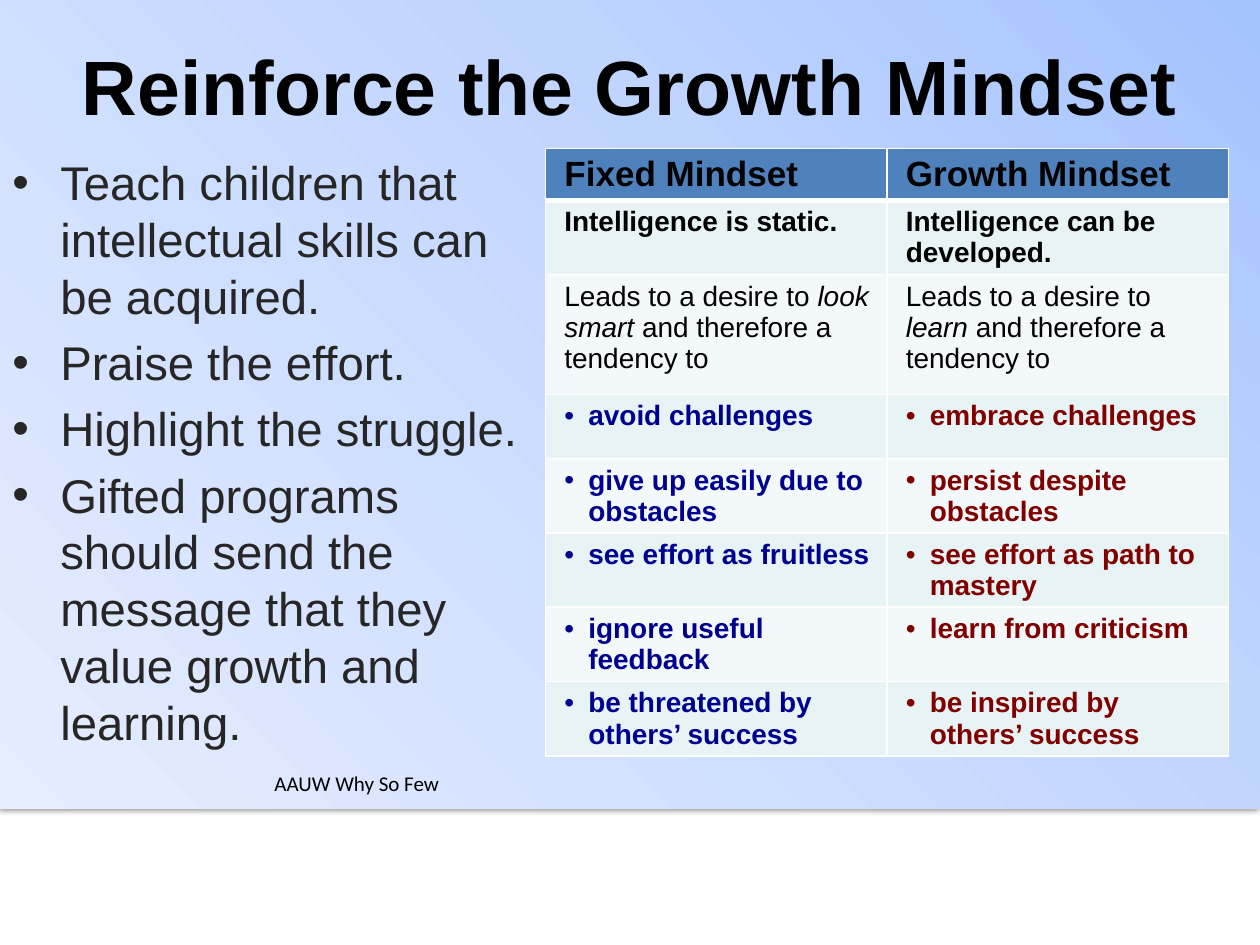
from dataclasses import dataclass

from lxml.etree import SubElement
from pptx import Presentation
from pptx.dml.color import RGBColor as Rgb
from pptx.enum.shapes import MSO_SHAPE as Preset
from pptx.enum.text import MSO_ANCHOR as Anchor, PP_ALIGN as Align
from pptx.oxml import parse_xml
from pptx.oxml.ns import nsdecls, qn
from pptx.util import Inches, Pt


@dataclass(frozen=True)
class Theme:
    font: str = "Arial"
    credit_font: str = "Calibri"
    title_size: float = 44
    body_size: float = 27
    header_size: float = 20
    cell_size: float = 16
    credit_size: float = 12
    ink: str = "000000"
    body_ink: str = "262626"
    mindset_inks: tuple = ("000090", "800000")
    header_fill: str = "4F81BD"
    band_fills: tuple = ("E7F3F4", "F3F9FA")
    border: str = "FFFFFF"
    backdrop_stops: tuple = ((0, "A4C4FF"), (35, "BFD4FF"), (100, "E6EEFF"))


THEME = Theme()

ADVICE = (
    "Teach children that intellectual skills can be acquired.",
    "Praise the effort.",
    "Highlight the struggle.",
    "Gifted programs should send the message that they value growth and learning.",
)
HEADINGS = ("Fixed Mindset", "Growth Mindset")
BELIEFS = ("Intelligence is static.", "Intelligence can be developed.")
# Asterisks enclose italic words.
DESIRES = (
    "Leads to a desire to *look smart *and therefore a tendency to",
    "Leads to a desire to *learn *and therefore a tendency to",
)
TENDENCIES = (
    ("avoid challenges", "embrace challenges"),
    ("give up easily due to obstacles", "persist despite obstacles"),
    ("see effort as fruitless", "see effort as path to mastery"),
    ("ignore useful feedback", "learn from criticism"),
    ("be threatened by others’ success", "be inspired by others’ success"),
)
ROW_HEIGHTS = (0.41, 0.59, 0.95, 0.51, 0.59, 0.59, 0.59, 0.59)


def style(para, size, color, bold=False, font=THEME.font):
    para.font.name = font
    para.font.size = Pt(size)
    para.font.bold = bold
    para.font.color.rgb = Rgb.from_string(color)


def add_bullet(para, indent):
    props = para._p.get_or_add_pPr()
    props.set("marL", str(Inches(indent)))
    props.set("indent", str(-Inches(indent)))
    SubElement(props, qn("a:buFont"), typeface=THEME.font)
    SubElement(props, qn("a:buChar"), char="•")


def add_backdrop(page):
    """Draw the panel with a gradient from its top right corner and a soft shadow."""
    panel = page.shapes.add_shape(Preset.RECTANGLE, 0, 0, Inches(10), Inches(6.42))
    stops = "".join(
        f'<a:gs pos="{place * 1000}"><a:srgbClr val="{color}"/></a:gs>'
        for place, color in THEME.backdrop_stops
    )
    props = panel._element.spPr
    props.append(parse_xml(
        f'<a:gradFill {nsdecls("a")} rotWithShape="1"><a:gsLst>{stops}</a:gsLst>'
        '<a:path path="circle"><a:fillToRect l="100000" b="100000"/></a:path>'
        '</a:gradFill>'
    ))
    panel.line.fill.background()
    props.append(parse_xml(
        f'<a:effectLst {nsdecls("a")}><a:outerShdw blurRad="{Pt(3.1)}" '
        f'dist="{Pt(1.6)}" dir="5400000" rotWithShape="0"><a:srgbClr val="{THEME.ink}">'
        '<a:alpha val="38000"/></a:srgbClr></a:outerShdw></a:effectLst>'
    ))


def add_text_frame(page, left, top, width, height):
    box = page.shapes.add_textbox(
        Inches(left), Inches(top), Inches(width), Inches(height))
    box.text_frame.word_wrap = True
    return box.text_frame


def add_title(page, text):
    frame = add_text_frame(page, 0, 0.25, 10, 1)
    frame.vertical_anchor = Anchor.MIDDLE
    frame.margin_bottom = Inches(0.21)
    para = frame.paragraphs[0]
    para.text = text
    para.alignment = Align.CENTER
    style(para, THEME.title_size, THEME.ink, bold=True)


def add_advice(page):
    frame = add_text_frame(page, 0, 1.17, 4.25, 5.67)
    for index, text in enumerate(ADVICE):
        para = frame.add_paragraph() if index else frame.paragraphs[0]
        para.text = text
        if index:
            para.space_before = Pt(5.4)
        add_bullet(para, 0.38)
        style(para, THEME.body_size, THEME.body_ink)


def add_credit(page, text):
    para = add_text_frame(page, 2.08, 6.07, 1.75, 0.3).paragraphs[0]
    para.text = text
    style(para, THEME.credit_size, THEME.ink, font=THEME.credit_font)


def set_borders(cell, top=1, bottom=1):
    props = cell._tc.get_or_add_tcPr()
    for side, width in (("L", 1), ("R", 1), ("T", top), ("B", bottom)):
        line = SubElement(props, qn(f"a:ln{side}"), w=str(Pt(width)))
        fill = SubElement(line, qn("a:solidFill"))
        SubElement(fill, qn("a:srgbClr"), val=THEME.border)


def fill_cell(cell, text, fill, size=THEME.cell_size, color=THEME.ink,
              bold=True, bullet=False):
    cell.margin_left = Inches(0.15)
    cell.margin_right = Inches(0.13)
    cell.margin_bottom = Inches(0)
    cell.fill.solid()
    cell.fill.fore_color.rgb = Rgb.from_string(fill)
    para = cell.text_frame.paragraphs[0]
    if bullet:
        add_bullet(para, 0.19)
    style(para, size, color, bold)
    for index, part in enumerate(text.split("*")):
        span = para.add_run()
        span.text = part
        if index % 2:
            span.font.italic = True


def add_mindset_table(page):
    rows = (HEADINGS, BELIEFS, DESIRES, *TENDENCIES)
    table = page.shapes.add_table(
        len(rows), len(HEADINGS), Inches(4.33), Inches(1.18),
        Inches(5.42), Inches(sum(ROW_HEIGHTS))).table
    for row, height in zip(table.rows, ROW_HEIGHTS):
        row.height = Inches(height)
    for r, texts in enumerate(rows):
        for c, text in enumerate(texts):
            cell = table.cell(r, c)
            set_borders(cell, top=3 if r == 1 else 1, bottom=3 if r == 0 else 1)
            if r == 0:
                fill_cell(cell, text, THEME.header_fill, THEME.header_size)
                continue
            fill = THEME.band_fills[(r - 1) % 2]
            if texts in TENDENCIES:
                fill_cell(cell, text, fill, color=THEME.mindset_inks[c], bullet=True)
            else:
                fill_cell(cell, text, fill, bold=texts is BELIEFS)


def main():
    deck = Presentation()
    deck.slide_width, deck.slide_height = Inches(10), Inches(7.5)
    page = deck.slides.add_slide(deck.slide_layouts[6])
    add_backdrop(page)
    add_title(page, "Reinforce the Growth Mindset")
    add_mindset_table(page)
    add_advice(page)
    add_credit(page, "AAUW Why So Few")
    deck.save("out.pptx")


if __name__ == "__main__":
    main()
